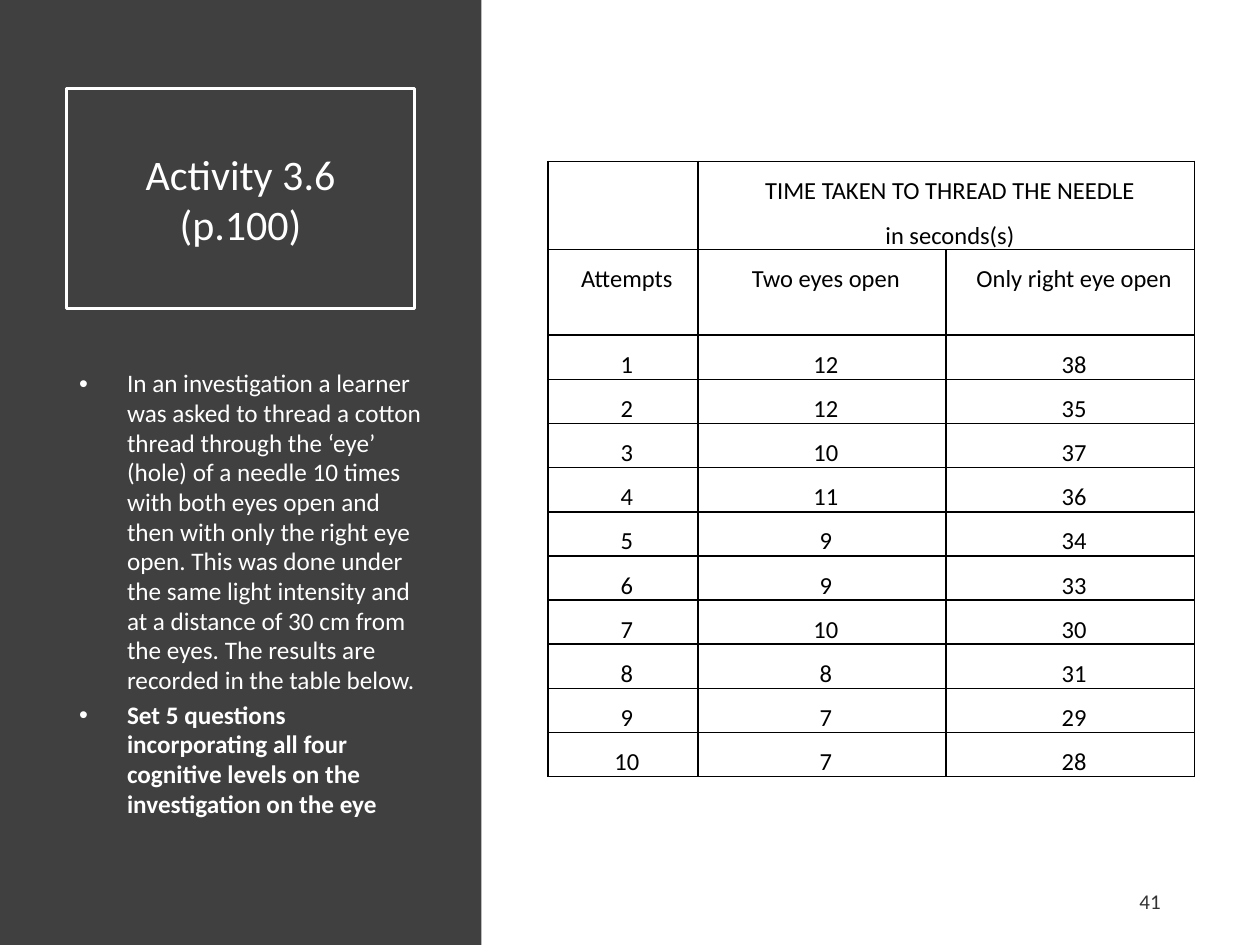
"""Builds the Activity 3.6 slide: task panel on the left, results table on the right."""
from lxml.etree import SubElement
from pptx import Presentation
from pptx.dml.color import RGBColor
from pptx.enum.shapes import MSO_SHAPE as Shape
from pptx.enum.text import MSO_ANCHOR as Anchor, PP_ALIGN as Align
from pptx.oxml.ns import qn
from pptx.util import Inches, Pt

COLORS = {"panel": "404040", "light": "FFFFFF", "dark": "000000", "number": "333333"}
FONT = "Calibri"
TITLE = "Activity 3.6\v(p.100)"
TASKS = [
    ("In an investigation a learner was asked to thread a cotton thread through the "
     "‘eye’ (hole) of a needle 10 times with both eyes open and then with only the "
     "right eye open. This was done under the same light intensity and at a distance "
     "of 30 cm from the eyes. The results are recorded in the table below.", False),
    ("Set 5 questions incorporating all four cognitive levels on the investigation "
     "on the eye", True),
]
PAGE_NUMBER = "41"
TABLE_TITLE = "TIME TAKEN TO THREAD THE NEEDLE\nin seconds(s)"
HEADINGS = ["Attempts", "Two eyes open", "Only right eye open"]
TWO_EYES = [12, 12, 10, 11, 9, 9, 10, 8, 7, 7]
RIGHT_EYE = [38, 35, 37, 36, 34, 33, 30, 31, 29, 28]
COLUMN_WIDTHS = [1.19, 1.97, 1.97]
HEADER_HEIGHT, ROW_HEIGHT = 0.68, 0.34


def color(name):
    return RGBColor.from_string(COLORS[name])


def style(para, size, name, align=Align.LEFT, bold=False):
    para.alignment = align
    para.font.name, para.font.size, para.font.bold = FONT, Pt(size), bold
    para.font.color.rgb = color(name)


def add_rectangle(slide, left, top, width, height):
    box = slide.shapes.add_shape(
        Shape.RECTANGLE, Inches(left), Inches(top), Inches(width), Inches(height))
    box.shadow.inherit = False
    return box


def add_text_frame(slide, left, top, width, height):
    box = slide.shapes.add_textbox(
        Inches(left), Inches(top), Inches(width), Inches(height))
    box.text_frame.word_wrap = True
    return box.text_frame


def add_bullet(para):
    properties = para._p.get_or_add_pPr()
    properties.set("marL", str(Inches(0.38)))
    properties.set("indent", str(-Inches(0.38)))
    SubElement(properties, qn("a:buFont"), typeface="Arial")
    SubElement(properties, qn("a:buChar"), char="•")


def add_borders(cell):
    properties = cell._tc.get_or_add_tcPr()
    for index, side in enumerate(("lnL", "lnR", "lnT", "lnB")):
        line = properties.makeelement(qn(f"a:{side}"), {"w": str(Pt(1))})
        fill = SubElement(line, qn("a:solidFill"))
        SubElement(fill, qn("a:srgbClr"), val=COLORS["dark"])
        properties.insert(index, line)


def add_panel(slide):
    panel = add_rectangle(slide, 0, 0, 3.82, 7.5)
    panel.fill.solid()
    panel.fill.fore_color.rgb = color("panel")
    panel.line.fill.background()

    title = add_rectangle(slide, 0.53, 0.7, 2.76, 1.75)
    title.fill.background()
    title.line.color.rgb = color("light")
    title.line.width = Pt(1.5)
    title.text_frame.text = TITLE
    title.text_frame.vertical_anchor = Anchor.MIDDLE
    style(title.text_frame.paragraphs[0], 24, "light", Align.CENTER)

    frame = add_text_frame(slide, 0.53, 2.88, 2.98, 3.91)
    frame.text = "\n".join(text for text, _ in TASKS)
    for index, (para, (_, bold)) in enumerate(zip(frame.paragraphs, TASKS)):
        add_bullet(para)
        para.line_spacing = 0.98
        if index:
            para.space_before = Pt(2.9)
        style(para, 14.4, "light", bold=bold)


def add_results(slide):
    attempts = range(1, len(TWO_EYES) + 1)
    rows = [["", TABLE_TITLE, ""], HEADINGS, *zip(attempts, TWO_EYES, RIGHT_EYE)]
    heights = [HEADER_HEIGHT] * 2 + [ROW_HEIGHT] * len(TWO_EYES)
    frame = slide.shapes.add_table(
        len(rows), len(COLUMN_WIDTHS), Inches(4.35), Inches(1.28),
        Inches(sum(COLUMN_WIDTHS)), Inches(sum(heights)))
    table = frame.table
    table.first_row = table.horz_banding = False
    for column, width in zip(table.columns, COLUMN_WIDTHS):
        column.width = Inches(width)
    for row, height, values in zip(table.rows, heights, rows):
        row.height = Inches(height)
        for cell, value in zip(row.cells, values):
            cell.margin_left, cell.margin_right = Inches(0.15), Inches(0.09)
            cell.margin_top = cell.margin_bottom = 0
            cell.fill.background()
            add_borders(cell)
            cell.text = str(value)
            for para in cell.text_frame.paragraphs:
                para.line_spacing = 1.5
                style(para, 14, "dark", Align.CENTER)
    table.cell(0, 1).merge(table.cell(0, 2))


def add_page_number(slide):
    frame = add_text_frame(slide, 8.44, 6.95, 0.87, 0.4)
    frame.vertical_anchor = Anchor.MIDDLE
    frame.text = PAGE_NUMBER
    style(frame.paragraphs[0], 12, "number", Align.RIGHT)


def main():
    deck = Presentation()
    deck.slide_width, deck.slide_height = Inches(10), Inches(7.5)
    slide = deck.slides.add_slide(deck.slide_layouts[6])
    add_panel(slide)
    add_page_number(slide)
    add_results(slide)
    deck.save("out.pptx")


if __name__ == "__main__":
    main()
